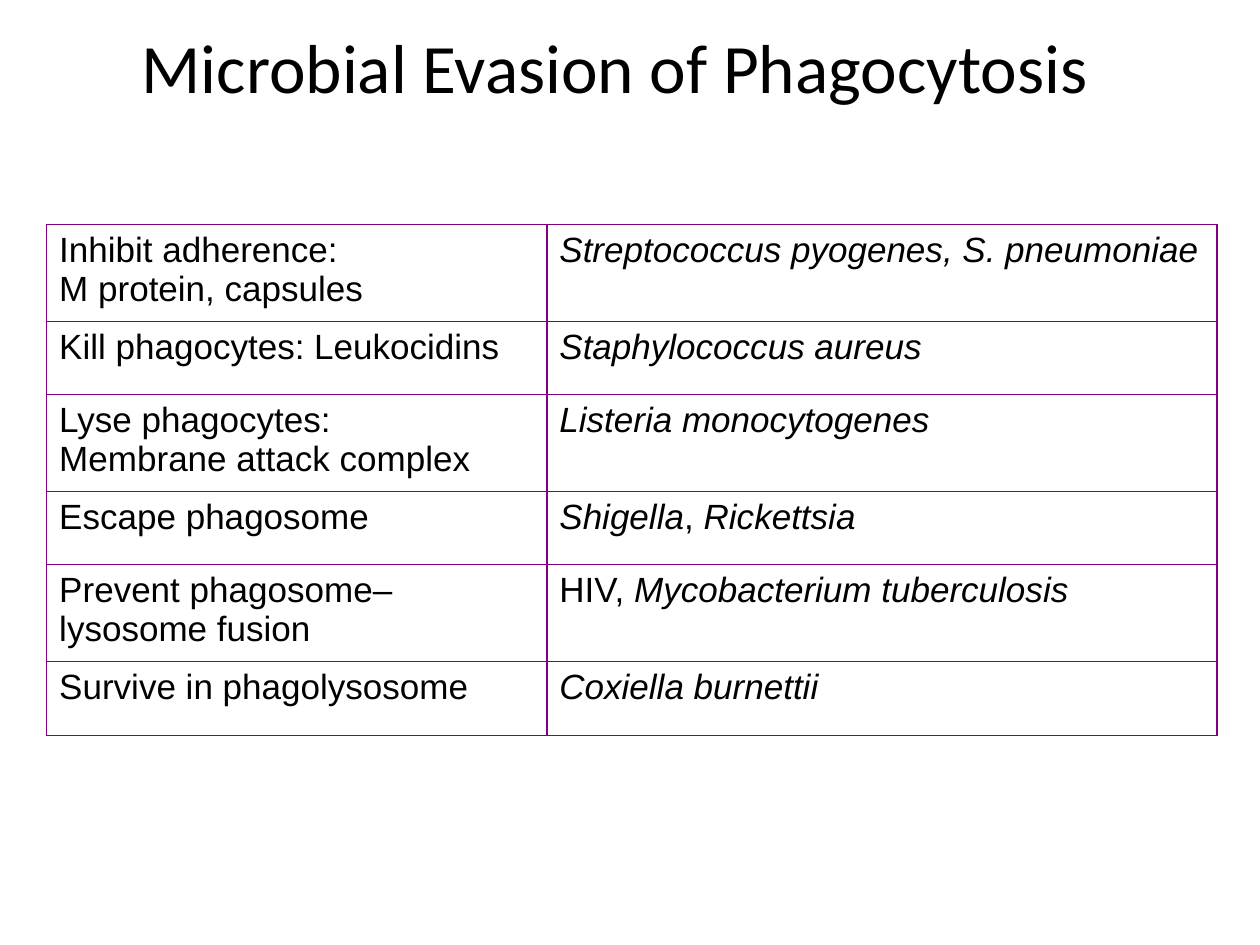
from lxml.etree import SubElement
from pptx import Presentation
from pptx.dml.color import RGBColor
from pptx.enum.text import MSO_ANCHOR, PP_ALIGN
from pptx.oxml.ns import qn
from pptx.util import Inches, Pt

COLORS = {"text": "000000", "border": "800080"}
COLUMN_WIDTHS = [3.97, 5.32]
ONE_LINE, TWO_LINES, LAST_LINE = 0.58, 0.77, 0.59

# Row height, lines of the strategy, microbe runs as (text, italic)
ROWS = [
    (TWO_LINES, ["Inhibit adherence: ", "M protein, capsules"],
     [("Streptococcus pyogenes, S. pneumoniae", True)]),
    (ONE_LINE, ["Kill phagocytes: Leukocidins"],
     [("Staphylococcus aureus", True)]),
    (TWO_LINES, ["Lyse phagocytes: ", "Membrane attack complex"],
     [("Listeria monocytogenes", True)]),
    (ONE_LINE, ["Escape phagosome"],
     [("Shigella", True), (", ", False), ("Rickettsia", True)]),
    (TWO_LINES, ["Prevent phagosome–lysosome fusion"],
     [("HIV, ", False), ("Mycobacterium tuberculosis", True)]),
    (LAST_LINE, ["Survive in phagolysosome"],
     [("Coxiella burnettii", True)]),
]


def add_run(paragraph, text, size, font_name, italic=False):
    run = paragraph.add_run()
    run.text = text
    run.font.size = Pt(size)
    run.font.name = font_name
    run.font.italic = italic
    run.font.color.rgb = RGBColor.from_string(COLORS["text"])


def add_title(slide, text):
    box = slide.shapes.add_textbox(
        Inches(0.13), Inches(0.11), Inches(9.5), Inches(0.83))
    frame = box.text_frame
    frame.word_wrap = True
    frame.vertical_anchor = MSO_ANCHOR.MIDDLE
    paragraph = frame.paragraphs[0]
    paragraph.alignment = PP_ALIGN.CENTER
    add_run(paragraph, text, 39.6, "Calibri")


def style_cell(cell):
    # Borders come before the fill in the cell properties
    properties = cell._tc.get_or_add_tcPr()
    for side in ("a:lnL", "a:lnR", "a:lnT", "a:lnB"):
        line = SubElement(properties, qn(side), w=str(Pt(1)))
        fill = SubElement(line, qn("a:solidFill"))
        SubElement(fill, qn("a:srgbClr"), val=COLORS["border"])
    cell.fill.background()


def add_evasion_table(slide):
    heights = [height for height, _, _ in ROWS]
    table = slide.shapes.add_table(
        len(ROWS), len(COLUMN_WIDTHS), Inches(0.37), Inches(1.78),
        Inches(sum(COLUMN_WIDTHS)), Inches(sum(heights))).table
    table.first_row = False
    table.horz_banding = False
    for column, width in zip(table.columns, COLUMN_WIDTHS):
        column.width = Inches(width)

    for row, (height, strategy, microbes) in zip(table.rows, ROWS):
        row.height = Inches(height)
        for cell in row.cells:
            style_cell(cell)
        strategy_paragraph, microbe_paragraph = (
            cell.text_frame.paragraphs[0] for cell in row.cells)
        for index, text in enumerate(strategy):
            if index:
                strategy_paragraph.add_line_break()
            add_run(strategy_paragraph, text, 20, "Arial")
        for text, italic in microbes:
            add_run(microbe_paragraph, text, 20, "Arial", italic)


def main():
    presentation = Presentation()
    presentation.slide_width = Inches(10)
    presentation.slide_height = Inches(7.5)
    slide = presentation.slides.add_slide(presentation.slide_layouts[6])
    add_evasion_table(slide)
    add_title(slide, "Microbial Evasion of Phagocytosis")
    presentation.save("out.pptx")


if __name__ == "__main__":
    main()
